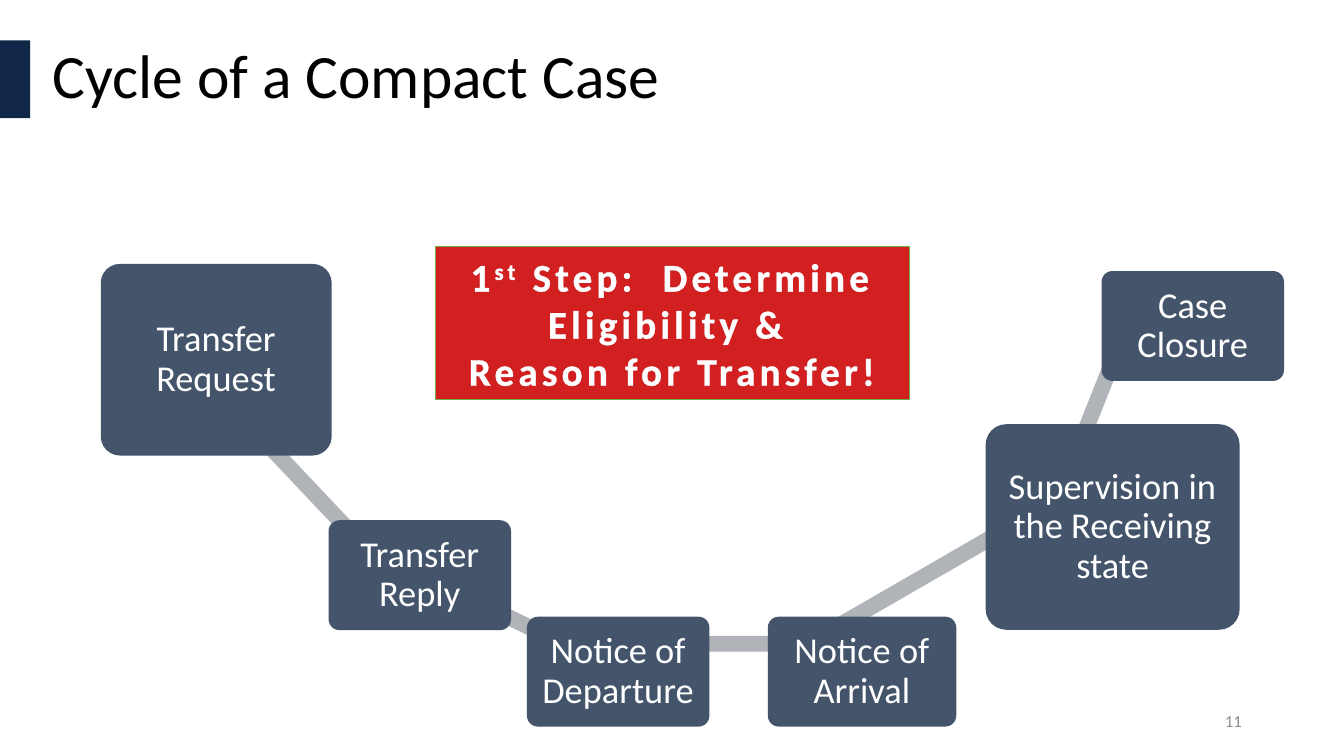
from dataclasses import dataclass
from itertools import pairwise
from math import atan2, degrees, hypot

from lxml import etree
from pptx import Presentation
from pptx.dml.color import RGBColor
from pptx.enum.shapes import MSO_SHAPE
from pptx.enum.text import MSO_ANCHOR, PP_ALIGN
from pptx.oxml.ns import qn
from pptx.util import Cm, Pt

RECTANGLE = MSO_SHAPE.RECTANGLE
ROUNDED = MSO_SHAPE.ROUNDED_RECTANGLE
MIDDLE = MSO_ANCHOR.MIDDLE
LEFT, CENTER, RIGHT = PP_ALIGN.LEFT, PP_ALIGN.CENTER, PP_ALIGN.RIGHT

BLACK = RGBColor(0x00, 0x00, 0x00)
WHITE = RGBColor(0xFF, 0xFF, 0xFF)
NAVY = RGBColor(0x10, 0x27, 0x47)
SLATE = RGBColor(0x44, 0x54, 0x6A)
PATH_GREY = RGBColor(0xB0, 0xB4, 0xB9)
NUMBER_GREY = RGBColor(0x8C, 0x8C, 0x8C)
RED = RGBColor(0xCC, 0x00, 0x00)
GREEN = RGBColor(0x70, 0xAD, 0x47)
OUTLINE = RGBColor(0xF4, 0xF5, 0xFA)

FONT = "Calibri"
PATH_WIDTH = 0.4
PATH_SHIFT = (-1.38, -0.7)  # paths run up and left of the stage centres


@dataclass(frozen=True)
class Stage:
    label: str
    left: float
    top: float
    width: float = 4.6
    height: float = 2.77

    @property
    def center(self) -> tuple[float, float]:
        return self.left + self.width / 2, self.top + self.height / 2


STAGES = [
    Stage("Transfer Request", 2.54, 6.65, 5.82, 4.83),
    Stage("Transfer Reply", 8.28, 13.11),
    Stage("Notice of Departure", 13.28, 15.54),
    Stage("Notice of Arrival", 19.35, 15.54, 4.75),
    Stage("Supervision in the Receiving state", 24.84, 10.69, 6.4, 5.18),
    Stage("Case Closure", 27.76, 6.83),
]


def style_paragraph(paragraph, size: float, color: RGBColor, align, bold: bool = False) -> None:
    paragraph.alignment = align
    for run in paragraph.runs:
        run.font.name = FONT
        run.font.size = Pt(size)
        run.font.bold = bold
        run.font.color.rgb = color


def add_block(slide, kind, left: float, top: float, width: float, height: float, color: RGBColor):
    block = slide.shapes.add_shape(kind, Cm(left), Cm(top), Cm(width), Cm(height))
    block.shadow.inherit = False
    block.fill.solid()
    block.fill.fore_color.rgb = color
    block.line.fill.background()
    return block


def add_path(slide, start: Stage, end: Stage) -> None:
    (x1, y1), (x2, y2) = start.center, end.center
    length = hypot(x2 - x1, y2 - y1)
    middle_x = (x1 + x2) / 2 + PATH_SHIFT[0]
    middle_y = (y1 + y2) / 2 + PATH_SHIFT[1]
    path = add_block(slide, RECTANGLE, middle_x - length / 2, middle_y - PATH_WIDTH / 2,
                     length, PATH_WIDTH, PATH_GREY)
    path.rotation = degrees(atan2(y2 - y1, x2 - x1))


def add_stage(slide, stage: Stage) -> None:
    box = add_block(slide, ROUNDED, stage.left, stage.top, stage.width, stage.height, SLATE)
    box.adjustments[0] = 0.1
    frame = box.text_frame
    frame.margin_left = frame.margin_right = Cm(0.28)
    frame.margin_top = frame.margin_bottom = Cm(0.28)
    frame.vertical_anchor = MIDDLE
    frame.text = stage.label
    frame.paragraphs[0].line_spacing = 0.9
    style_paragraph(frame.paragraphs[0], 26, WHITE, CENTER)


def outline_letters(run) -> None:
    properties = run.font._element
    properties.set("spc", "300")
    line = etree.Element(qn("a:ln"), w=str(Pt(0.9)))
    fill = etree.SubElement(line, qn("a:solidFill"))
    etree.SubElement(fill, qn("a:srgbClr"), val=str(OUTLINE))
    properties.insert(0, line)


def add_first_step(slide) -> None:
    banner = add_block(slide, RECTANGLE, 10.97, 6.22, 11.94, 3.84, RED)
    banner.line.color.rgb = GREEN
    banner.line.width = Pt(0.5)
    red = banner.fill._xPr.find(qn("a:solidFill"))[0]
    etree.SubElement(red, qn("a:alpha"), val="88000")

    frame = banner.text_frame
    frame.vertical_anchor = MIDDLE
    step = frame.paragraphs[0]
    for words in ("1", "st", " Step:  Determine Eligibility & "):
        step.add_run().text = words
    step.runs[1].font._element.set("baseline", "30000")
    reason = frame.add_paragraph()
    reason.text = "Reason for Transfer!"
    for paragraph in frame.paragraphs:
        style_paragraph(paragraph, 28, WHITE, CENTER, bold=True)
        for run in paragraph.runs:
            outline_letters(run)


def add_title(slide) -> None:
    title = slide.shapes.title
    title.left, title.top, title.width, title.height = Cm(1.07), Cm(0.15), Cm(29.21), Cm(3.68)
    title.text_frame.text = "Cycle of a Compact Case"
    title.text_frame.vertical_anchor = MIDDLE
    title.text_frame.paragraphs[0].line_spacing = 0.9
    style_paragraph(title.text_frame.paragraphs[0], 44, BLACK, LEFT)


def add_page_number(slide) -> None:
    number = slide.shapes.add_textbox(Cm(23.93), Cm(17.65), Cm(7.62), Cm(1.02))
    number.text_frame.word_wrap = True
    number.text_frame.vertical_anchor = MIDDLE
    number.text_frame.text = "11"
    style_paragraph(number.text_frame.paragraphs[0], 12, NUMBER_GREY, RIGHT)


def main() -> None:
    deck = Presentation()
    deck.slide_width, deck.slide_height = Cm(33.87), Cm(19.05)
    slide = deck.slides.add_slide(deck.slide_layouts[5])

    # Title with its navy marker
    add_title(slide)
    add_block(slide, RECTANGLE, 0, 1.02, 0.76, 1.96, NAVY)

    # Paths lie beneath the stages they join
    for start, end in pairwise(STAGES):
        add_path(slide, start, end)
    for stage in STAGES:
        add_stage(slide, stage)

    # Banner and page number
    add_first_step(slide)
    add_page_number(slide)

    deck.save("out.pptx")


if __name__ == "__main__":
    main()
